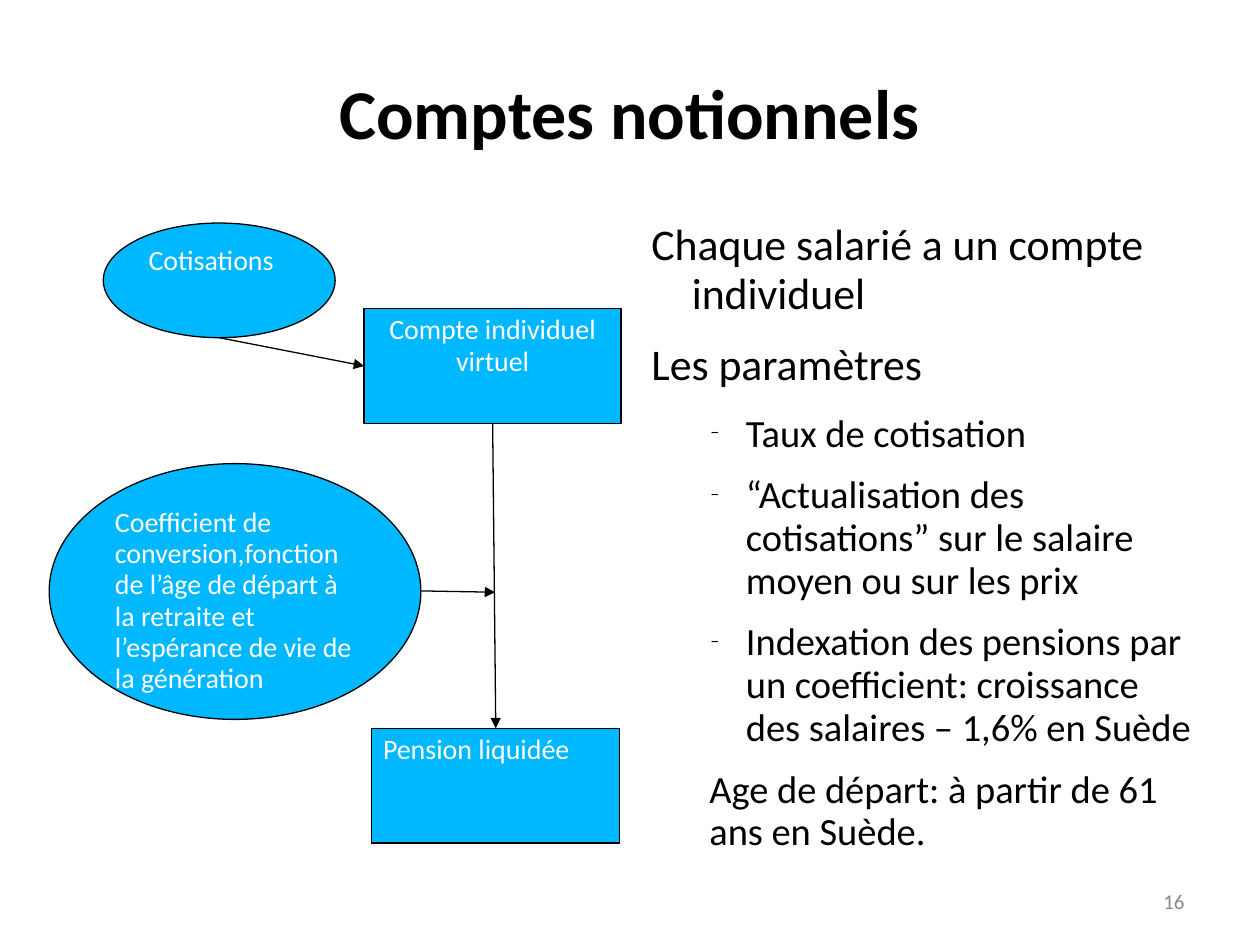
from dataclasses import dataclass

from lxml.etree import SubElement
from pptx import Presentation
from pptx.dml.color import RGBColor
from pptx.enum.dml import MSO_THEME_COLOR
from pptx.enum.shapes import MSO_CONNECTOR as Connector, MSO_SHAPE as Shape
from pptx.enum.text import MSO_ANCHOR as Anchor, MSO_AUTO_SIZE as AutoSize, PP_ALIGN as Align
from pptx.oxml.ns import qn
from pptx.util import Inches, Pt


@dataclass(frozen=True)
class Theme:
    font: str = "Calibri"
    ink: RGBColor = RGBColor(0, 0, 0)
    paper: RGBColor = RGBColor(255, 255, 255)
    node: RGBColor = RGBColor(0x00, 0xB8, 0xFF)
    muted: RGBColor = RGBColor(0x89, 0x89, 0x89)
    title: int = 40
    point: int = 25
    detail: int = 22
    label: int = 16
    number: int = 12
    line: float = 0.75
    leading: float = 0.93


theme = Theme()


def write(para, text, size, color=theme.ink, bold=False, align=Align.LEFT,
          leading=theme.leading, after=0, margin=0, indent=0, bullet=None):
    """Fill a paragraph with one formatted span; margin and indent are in inches."""
    para.alignment = align
    para.line_spacing = leading
    para.space_before = Pt(0)
    para.space_after = Pt(after)
    span = para.add_run()
    span.text = text
    span.font.name = theme.font
    span.font.size = Pt(size)
    span.font.bold = bold
    span.font.color.rgb = color

    props = para._p.get_or_add_pPr()
    props.set("marL", str(Inches(margin)))
    props.set("indent", str(Inches(indent)))
    if bullet:
        bullet_color = SubElement(props, qn("a:buClr"))
        SubElement(bullet_color, qn("a:srgbClr"), val=str(theme.ink))
        SubElement(props, qn("a:buSzPct"), val="45000")
        SubElement(props, qn("a:buFont"), typeface=theme.font)
        SubElement(props, qn("a:buChar"), char=bullet)
    else:
        SubElement(props, qn("a:buNone"))


def set_frame(box, anchor=Anchor.TOP, side=0, edge=0):
    """Wrap the text of a box and set its anchor and insets; return its text frame."""
    frame = box.text_frame
    frame.word_wrap = True
    frame.auto_size = AutoSize.NONE
    frame.vertical_anchor = anchor
    frame.margin_left = frame.margin_right = Inches(side)
    frame.margin_top = frame.margin_bottom = Inches(edge)
    return frame


deck = Presentation()
deck.slide_width, deck.slide_height = Inches(10), Inches(7.5)
page = deck.slides.add_slide(deck.slide_layouts[1])
title, body = page.placeholders

# Title
title.left, title.top, title.width, title.height = map(Inches, (0.5, 0.3, 8.99, 1.25))
write(set_frame(title, Anchor.MIDDLE).paragraphs[0], "Comptes notionnels",
      theme.title, bold=True, align=Align.CENTER)

# Points on the right
point = dict(size=theme.point, margin=0.42, indent=-0.32, after=12.9)
detail = dict(size=theme.detail, margin=0.85, indent=-0.28, after=10.4, bullet="−")
closing = dict(size=theme.detail, margin=0.56, after=10.4)
points = [
    ("Chaque salarié a un compte individuel", 0, point),
    ("Les paramètres", 0, point),
    ("Taux de cotisation", 1, detail),
    ("“Actualisation des cotisations” sur le salaire moyen ou sur les prix", 1, detail),
    ("Indexation des pensions par un coefficient: croissance des salaires – 1,6% en Suède",
     1, detail),
    ("Age de départ: à partir de 61 ans en Suède.", 0, closing),
]
body.left, body.top, body.width, body.height = map(Inches, (5.07, 1.76, 4.42, 4.95))
frame = set_frame(body)
for index, (text, level, style) in enumerate(points):
    para = frame.add_paragraph() if index else frame.paragraphs[0]
    para.level = level
    write(para, text, **style)

# Nodes of the diagram
nodes = [
    ("Compte individuel virtuel", Shape.RECTANGLE, (2.89, 2.45, 2.04, 0.91), Align.CENTER),
    ("Cotisations", Shape.OVAL, (0.82, 1.77, 1.84, 0.91), Align.LEFT),
    ("Pension liquidée", Shape.RECTANGLE, (2.95, 5.78, 1.97, 0.91), Align.LEFT),
    ("Coefficient de conversion,fonction de l’âge de départ à la retraite "
     "et l’espérance de vie de la génération",
     Shape.OVAL, (0.39, 3.68, 2.95, 2.03), Align.LEFT),
]
drawn = []
for text, kind, place, align in nodes:
    node = page.shapes.add_shape(kind, *map(Inches, place))
    node.shadow.inherit = False
    node.fill.solid()
    node.fill.fore_color.rgb = theme.node
    node.line.color.rgb = theme.ink
    node.line.width = Pt(theme.line)
    write(set_frame(node, side=0.09, edge=0.05).paragraphs[0], text,
          theme.label, color=theme.paper, align=align)
    drawn.append(node)
account, contributions, pension, coefficient = drawn

# Arrows: start, end, then the rectangle side joined at each end
arrows = [
    ((1.74, 2.68), (2.89, 2.9), None, (account, 1)),
    ((3.91, 3.36), (3.94, 5.78), (account, 2), (pension, 0)),
    ((3.34, 4.69), (3.93, 4.7), None, None),
]
for start, end, source, target in arrows:
    arrow = page.shapes.add_connector(Connector.STRAIGHT, *map(Inches, start + end))
    if source:
        arrow.begin_connect(*source)
    if target:
        arrow.end_connect(*target)
    arrow.line.color.rgb = theme.ink
    arrow.line.width = Pt(theme.line)
    SubElement(arrow.line._get_or_add_ln(), qn("a:tailEnd"), type="triangle")
    SubElement(arrow._element.spPr, qn("a:effectLst"))

# Page number
number = page.shapes.add_textbox(*map(Inches, (7.17, 6.95, 2.33, 0.4)))
write(set_frame(number, Anchor.MIDDLE, side=0.1, edge=0.05).paragraphs[0], "16",
      theme.number, color=theme.muted, align=Align.RIGHT, leading=1.0)

deck.save("out.pptx")
